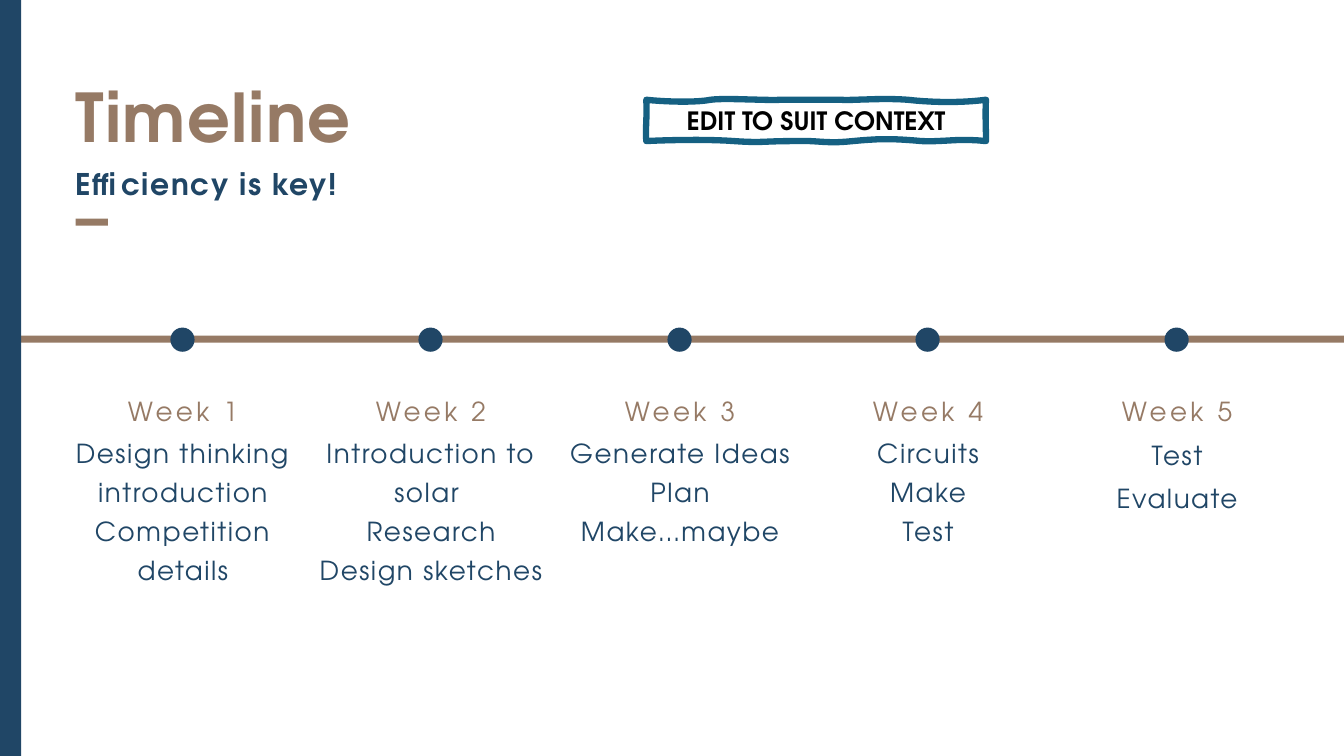
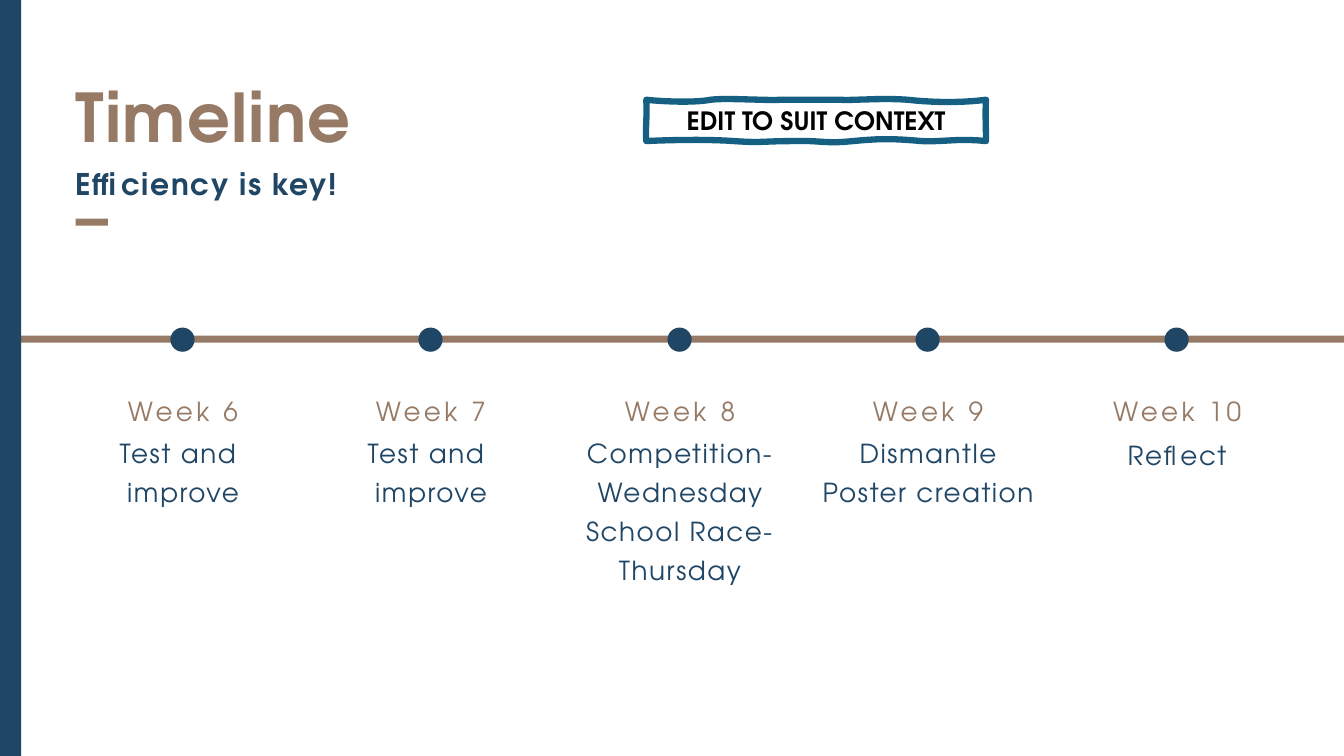
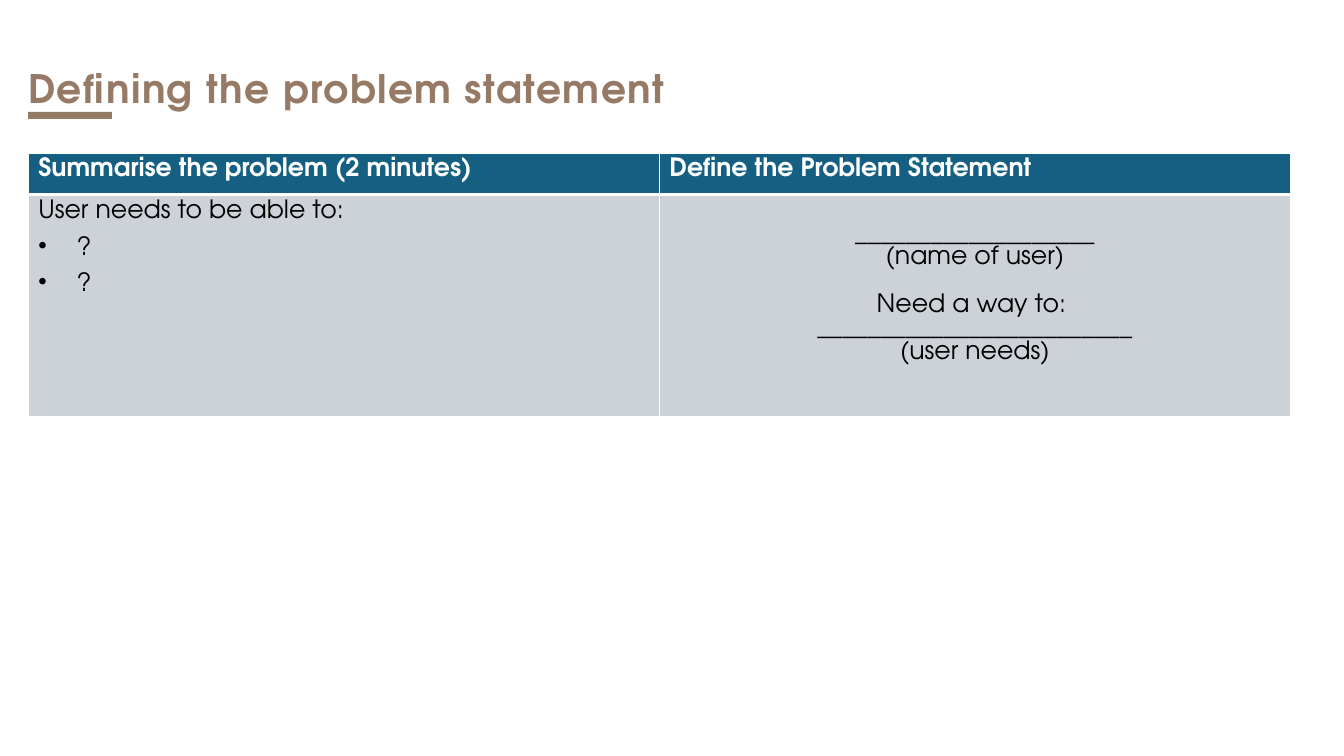
from dataclasses import dataclass

import lxml.etree
import pptx
import pptx.dml.color
import pptx.enum.shapes
import pptx.enum.text
import pptx.oxml
import pptx.oxml.ns
import pptx.util

ALIGN = pptx.enum.text.PP_ALIGN
ANCHOR = pptx.enum.text.MSO_ANCHOR
SHAPE = pptx.enum.shapes.MSO_SHAPE

PX = 9144  # one px is a hundredth of an inch
SLIDE_WIDTH, SLIDE_HEIGHT = 1333, 750


@dataclass(frozen=True)
class TextStyle:
    size: float
    color: str
    bold: bool = False
    spacing: float = 0
    line: float = 0
    align: int = ALIGN.LEFT


class Theme:
    """Colours and type sizes of the whole deck."""
    font = "TeX Gyre Adventor"
    navy = "204666"
    brown = "967A65"
    teal = "156082"
    grey = "CCD2D8"
    white = "FFFFFF"
    black = "000000"

    title = TextStyle(48, brown, True, 1, 57.6)
    small_title = TextStyle(28, brown, True, 1, 57.6)
    subtitle = TextStyle(21.3, navy, True, 1.1, 25.6)
    week = TextStyle(18.7, brown, False, 2.4, 29.5, ALIGN.CENTER)
    tasks = TextStyle(18.7, navy, False, 1.1, 28, ALIGN.CENTER)
    last_tasks = TextStyle(18.7, navy, False, 1.1, 30.8, ALIGN.CENTER)
    banner = TextStyle(18, black, True, align=ALIGN.CENTER)
    header = TextStyle(18, white, True)
    cell = TextStyle(18, black)
    bullet = TextStyle(18, black, False, 0.6, 26.3)
    blank_form = TextStyle(18, black, align=ALIGN.CENTER)


# Timeline geometry
AXIS_Y = 333
COLUMN_LEFT, COLUMN_WIDTH = 60, 243
DOT_SIZE = 24
COLUMN_COUNT = 5

# Wavy banner outline: start, then cubic curves (two controls and an end)
BANNER_START = (641, 99)
BANNER_CURVES = [
    ((659, 101), (690, 102), (705, 99)),
    ((720, 97), (759, 100), (776, 99)),
    ((792, 99), (821, 99), (833, 99)),
    ((845, 100), (873, 97), (900, 99)),
    ((927, 102), (955, 102), (978, 99)),
    ((977, 111), (978, 130), (978, 140)),
    ((949, 137), (937, 141), (914, 140)),
    ((891, 138), (876, 137), (846, 140)),
    ((817, 143), (814, 139), (786, 140)),
    ((758, 140), (755, 142), (728, 140)),
    ((702, 138), (659, 139), (641, 140)),
    ((640, 126), (642, 116), (641, 99)),
]
CURVE_STEPS = 10

FIRST_WEEKS = [
    ("Week 1", ["Design thinking introduction", "Competition details"]),
    ("Week 2", ["Introduction to solar ", "Research", "Design sketches"]),
    ("Week 3", ["Generate Ideas", "Plan", "Make…maybe"]),
    ("Week 4", ["Circuits", "Make", "Test"]),
    ("Week 5", ["Test", "Evaluate"]),
]
LAST_WEEKS = [
    ("Week 6", ["Test and \vimprove"]),
    ("Week 7", ["Test and \vimprove"]),
    ("Week 8", ["Competition- Wednesday", "School Race- Thursday"]),
    ("Week 9", ["Dismantle", "Poster creation"]),
    ("Week 10", ["Reflect"]),
]


def emu(*lengths):
    return [pptx.util.Emu(round(length * PX)) for length in lengths]


def rgb(color):
    return pptx.dml.color.RGBColor.from_string(color)


# Text
def format_para(para, style):
    para.alignment = style.align
    if style.line:
        para.line_spacing = pptx.util.Pt(style.line)
    for span in para.runs:
        span.font.name = Theme.font
        span.font.size = pptx.util.Pt(style.size)
        span.font.bold = style.bold
        span.font.color.rgb = rgb(style.color)
        if style.spacing:
            span.font._element.set("spc", str(round(style.spacing * 100)))


def write(frame, lines, style):
    for index, line in enumerate(lines):
        para = frame.paragraphs[0] if index == 0 else frame.add_paragraph()
        para.text = line
        format_para(para, style)


def set_plain_frame(frame):
    frame.word_wrap = True
    frame.auto_size = pptx.enum.text.MSO_AUTO_SIZE.NONE
    frame.vertical_anchor = ANCHOR.TOP
    frame.margin_left = frame.margin_top = 0
    frame.margin_right = frame.margin_bottom = 0


def add_text(page, left, top, width, height, lines, style):
    box = page.shapes.add_textbox(*emu(left, top, width, height))
    set_plain_frame(box.text_frame)
    write(box.text_frame, lines, style)


def set_title(page, left, top, width, height, text, style):
    title = page.shapes.title
    title.left, title.top, title.width, title.height = emu(left, top, width, height)
    set_plain_frame(title.text_frame)
    write(title.text_frame, [text], style)


def add_bullet(para):
    properties = para._p.get_or_add_pPr()
    indent = 38 * PX
    properties.set("marL", str(indent))
    properties.set("indent", str(-indent))
    bullet = lxml.etree.SubElement(properties, pptx.oxml.ns.qn("a:buChar"))
    bullet.set("char", "•")


# Shapes
def add_filled(page, kind, left, top, width, height, color):
    shape = page.shapes.add_shape(kind, *emu(left, top, width, height))
    shape.shadow.inherit = False
    shape.fill.solid()
    shape.fill.fore_color.rgb = rgb(color)
    shape.line.fill.background()


def curve_points(start, first, second, end):
    for step in range(1, CURVE_STEPS + 1):
        t = step / CURVE_STEPS
        weights = ((1 - t) ** 3, 3 * t * (1 - t) ** 2, 3 * t * t * (1 - t), t ** 3)
        corners = (start, first, second, end)
        yield emu(*(sum(w * c[axis] for w, c in zip(weights, corners))
                    for axis in (0, 1)))


def add_banner(page, text):
    points = []
    start = BANNER_START
    for first, second, end in BANNER_CURVES:
        points.extend(curve_points(start, first, second, end))
        start = end
    builder = page.shapes.build_freeform(*emu(*BANNER_START))
    builder.add_line_segments(points, close=True)
    banner = builder.convert_to_shape()
    banner.shadow.inherit = False
    banner.fill.background()
    banner.line.color.rgb = rgb(Theme.teal)
    banner.line.width = pptx.util.Pt(4.5)
    banner.text_frame.word_wrap = True
    banner.text_frame.vertical_anchor = ANCHOR.MIDDLE
    write(banner.text_frame, [text], Theme.banner)


# Table cells
def set_cell_look(cell, color, bottom_width):
    cell.fill.solid()
    cell.fill.fore_color.rgb = rgb(color)
    properties = cell._tc.get_or_add_tcPr()
    widths = {"lnL": 1, "lnR": 1, "lnT": 1, "lnB": bottom_width}
    for index, (side, width) in enumerate(widths.items()):
        properties.insert(index, pptx.oxml.parse_xml(
            f'<a:{side} {pptx.oxml.ns.nsdecls("a")} w="{width * 12700}">'
            f'<a:solidFill><a:srgbClr val="{Theme.white}"/></a:solidFill>'
            f'</a:{side}>'))


# Slides
def new_page(deck):
    return deck.slides.add_slide(deck.slide_layouts.get_by_name("Title Only"))


def add_week(page, index, week, tasks):
    left = COLUMN_LEFT + index * 493 // 2
    last = index == COLUMN_COUNT - 1
    add_filled(page, SHAPE.OVAL, left + (COLUMN_WIDTH - DOT_SIZE) // 2,
               AXIS_Y + 4 - DOT_SIZE // 2, DOT_SIZE, DOT_SIZE, Theme.navy)
    add_text(page, left, 382, COLUMN_WIDTH, 38, [week], Theme.week)
    add_text(page, left, 424 if last else 426, COLUMN_WIDTH, 155, tasks,
             Theme.last_tasks if last else Theme.tasks)


def add_timeline_page(deck, weeks):
    page = new_page(deck)
    add_filled(page, SHAPE.RECTANGLE, 0, AXIS_Y, SLIDE_WIDTH, 7, Theme.brown)
    add_filled(page, SHAPE.RECTANGLE, 0, 0, 21, SLIDE_HEIGHT, Theme.navy)
    set_title(page, 75, 75, 347, 81, "Timeline", Theme.title)
    add_text(page, 75, 164, 347, 36, ["Efficiency is key!"], Theme.subtitle)
    add_filled(page, SHAPE.RECTANGLE, 75, 217, 32, 7, Theme.brown)
    add_banner(page, "EDIT TO SUIT CONTEXT")
    for index, (week, tasks) in enumerate(weeks):
        add_week(page, index, week, tasks)


def add_problem_page(deck):
    page = new_page(deck)
    set_title(page, 28, 30, 695, 73, "Defining the problem statement",
              Theme.small_title)
    add_filled(page, SHAPE.RECTANGLE, 28, 111, 83, 7, Theme.brown)

    table = page.shapes.add_table(2, 2, *emu(28, 152, 1252, 261)).table
    table.rows[0].height, table.rows[1].height = emu(41, 220)
    headers = ["Summarise the problem (2 minutes)", "Define the Problem Statement"]
    for column, header in enumerate(headers):
        write(table.cell(0, column).text_frame, [header], Theme.header)
        set_cell_look(table.cell(0, column), Theme.teal, 3)
        set_cell_look(table.cell(1, column), Theme.grey, 1)

    needs = table.cell(1, 0).text_frame
    write(needs, ["User needs to be able to:", "?", "?"], Theme.cell)
    for para in needs.paragraphs[1:]:
        format_para(para, Theme.bullet)
        add_bullet(para)

    statement = table.cell(1, 1)
    statement.margin_top = emu(28)[0]
    write(statement.text_frame,
          ["_" * 19, "(name of user)", "Need a way to: ", "_" * 25, "(user needs)"],
          Theme.blank_form)
    statement.text_frame.paragraphs[2].space_before = pptx.util.Pt(17)


def main():
    deck = pptx.Presentation()
    deck.slide_width, deck.slide_height = emu(SLIDE_WIDTH, SLIDE_HEIGHT)
    add_timeline_page(deck, FIRST_WEEKS)
    add_timeline_page(deck, LAST_WEEKS)
    add_problem_page(deck)
    deck.save("out.pptx")


if __name__ == "__main__":
    main()
